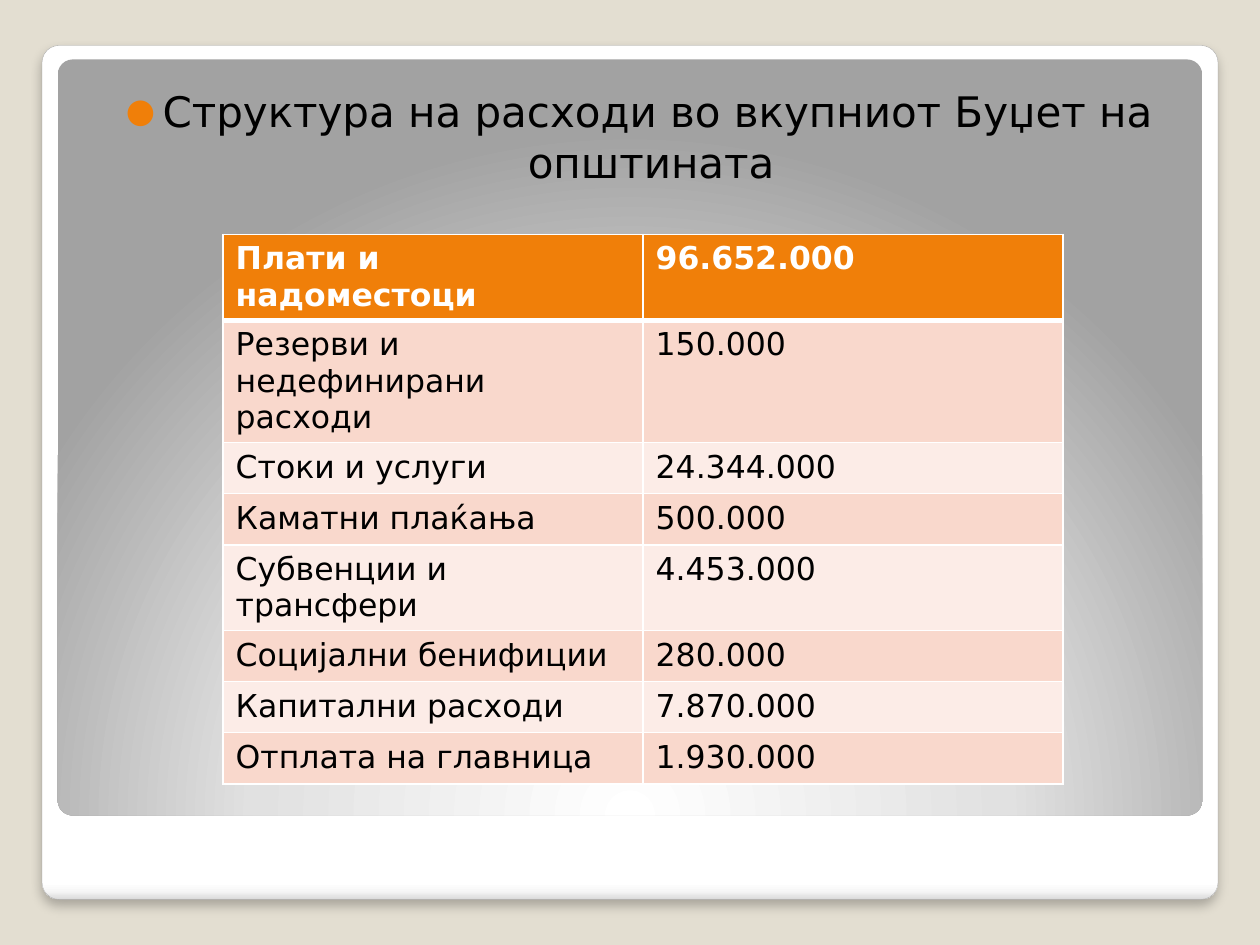
from lxml import etree
from pptx import Presentation
from pptx.dml.color import RGBColor
from pptx.enum.shapes import MSO_SHAPE
from pptx.enum.text import MSO_AUTO_SIZE, PP_ALIGN
from pptx.oxml import parse_xml
from pptx.oxml.ns import nsdecls, qn
from pptx.util import Pt

ROUNDED = MSO_SHAPE.ROUNDED_RECTANGLE
CENTER = PP_ALIGN.CENTER
NO_AUTOFIT = MSO_AUTO_SIZE.NONE

COLORS = {
    "background": "E3DED1", "white": "FFFFFF", "black": "000000",
    "accent": "F07F09", "band_dark": "F9D8CC", "band_light": "FCECE7",
    "outline": "A4A4A4",
}
FRAME_STOPS = [(0, "FFFFFF"), (98, "FFFFFF"), (99, "F7F7F7"), (100, "DADADA")]
GLOW_STOPS = [(0, "FFFFFF"), (55, "E1E1E1"), (100, "A2A2A2")]
DOWNWARD = '<a:lin ang="5400000" scaled="0"/>'
FROM_BELOW = ('<a:path path="circle">'
              '<a:fillToRect l="50000" t="175000" r="50000" b="-75000"/></a:path>')

HEADING = "Структура на расходи во вкупниот Буџет на општината "
EXPENSES = [
    ("Плати и надоместоци", "96.652.000"),
    ("Резерви и недефинирани расходи", "150.000"),
    ("Стоки и услуги", "24.344.000"),
    ("Каматни плаќања", "500.000"),
    ("Субвенции и трансфери", "4.453.000"),
    ("Социјални бенифиции", "280.000"),
    ("Капитални расходи", "7.870.000"),
    ("Отплата на главница", "1.930.000"),
]


def rgb(name):
    return RGBColor.from_string(COLORS[name])


def apply(target, values):
    for attribute, value in values.items():
        setattr(target, attribute, value)


class BudgetSlide:
    font_name = "DejaVu Sans"

    def __init__(self, deck):
        self.slide = deck.slides.add_slide(deck.slide_layouts[1])
        self.shapes = self.slide.shapes
        title = self.shapes.title._element
        title.getparent().remove(title)
        fill = self.slide.background.fill
        fill.solid()
        fill.fore_color.rgb = rgb("background")

    def style_font(self, font, size, color, bold=False):
        apply(font, {"name": self.font_name, "size": Pt(size), "bold": bold})
        font.color.rgb = rgb(color)

    def panel(self, left, top, width, height, stops, direction):
        """Add a rounded panel with a gradient and no outline."""
        panel = self.shapes.add_shape(ROUNDED, Pt(left), Pt(top), Pt(width), Pt(height))
        panel.adjustments[0] = 0.02
        panel.shadow.inherit = False
        panel.line.fill.background()
        stop_list = "".join(
            f'<a:gs pos="{position * 1000}"><a:srgbClr val="{color}"/></a:gs>'
            for position, color in stops)
        gradient = parse_xml(
            f'<a:gradFill {nsdecls("a")} rotWithShape="1">'
            f'<a:gsLst>{stop_list}</a:gsLst>{direction}</a:gradFill>')
        panel._element.spPr.find(qn("a:prstGeom")).addnext(gradient)
        return panel

    def outline_and_shadow(self, panel):
        panel.line.color.rgb = rgb("outline")
        panel.line.width = Pt(0.16)
        effects = panel._element.spPr.find(qn("a:effectLst"))
        effects.append(parse_xml(
            f'<a:outerShdw {nsdecls("a")} blurRad="{Pt(6)}" dist="{Pt(4)}" '
            f'dir="5400000" algn="t" rotWithShape="0"><a:srgbClr val="{COLORS["black"]}">'
            '<a:alpha val="25000"/></a:srgbClr></a:outerShdw>'))

    def heading(self, text, left, top, width, height):
        body = self.slide.placeholders[1]
        self.shapes._spTree.append(body._element)  # bring in front of the panels
        apply(body, {"left": Pt(left), "top": Pt(top),
                     "width": Pt(width), "height": Pt(height)})
        frame = body.text_frame
        apply(frame, {"text": text, "auto_size": NO_AUTOFIT, "word_wrap": True,
                      "margin_left": Pt(14.4), "margin_top": Pt(7.2),
                      "margin_right": Pt(7.2), "margin_bottom": Pt(3.6)})
        paragraph = frame.paragraphs[0]
        apply(paragraph, {"alignment": CENTER, "space_before": Pt(2.5)})
        self.style_font(paragraph.runs[0].font, 24, "black")
        properties = paragraph._p.get_or_add_pPr()
        properties.set("marL", str(Pt(21)))
        properties.set("indent", str(Pt(-21)))
        color = etree.SubElement(properties, qn("a:buClr"))
        etree.SubElement(color, qn("a:srgbClr"), val=COLORS["accent"])
        etree.SubElement(properties, qn("a:buSzPct"), val="80000")
        etree.SubElement(properties, qn("a:buFont"), typeface=self.font_name)
        etree.SubElement(properties, qn("a:buChar"), char="●")

    def cell_borders(self, cell, bottom):
        properties = cell._tc.get_or_add_tcPr()
        widths = {"lnL": 1, "lnR": 1, "lnT": 1, "lnB": bottom}
        for position, (side, width) in enumerate(widths.items()):
            properties.insert(position, parse_xml(
                f'<a:{side} {nsdecls("a")} w="{Pt(width)}"><a:solidFill>'
                f'<a:srgbClr val="{COLORS["white"]}"/></a:solidFill></a:{side}>'))

    def table(self, rows, left, top, column_width, row_height):
        columns = len(rows[0])
        table = self.shapes.add_table(
            len(rows), columns, Pt(left), Pt(top),
            Pt(column_width * columns), Pt(row_height * len(rows))).table
        for index, row in enumerate(rows):
            is_header = index == 0
            band = "band_dark" if index % 2 else "band_light"
            for column, text in enumerate(row):
                cell = table.cell(index, column)
                cell.text = text
                self.style_font(cell.text_frame.paragraphs[0].runs[0].font, 18,
                                "white" if is_header else "black", is_header)
                cell.fill.solid()
                cell.fill.fore_color.rgb = rgb("accent" if is_header else band)
                self.cell_borders(cell, bottom=3 if is_header else 1)


def main():
    deck = Presentation()
    apply(deck, {"slide_width": Pt(720), "slide_height": Pt(540)})
    budget = BudgetSlide(deck)
    frame = budget.panel(24, 26, 672, 488, FRAME_STOPS, DOWNWARD)
    budget.outline_and_shadow(frame)
    budget.panel(33, 34, 654, 432, GLOW_STOPS, FROM_BELOW)
    budget.heading(HEADING, 39.6, 41.8, 644.4, 329.8)
    budget.table(EXPENSES, 127.5, 134, 240, 29.2)
    deck.save("out.pptx")


if __name__ == "__main__":
    main()
